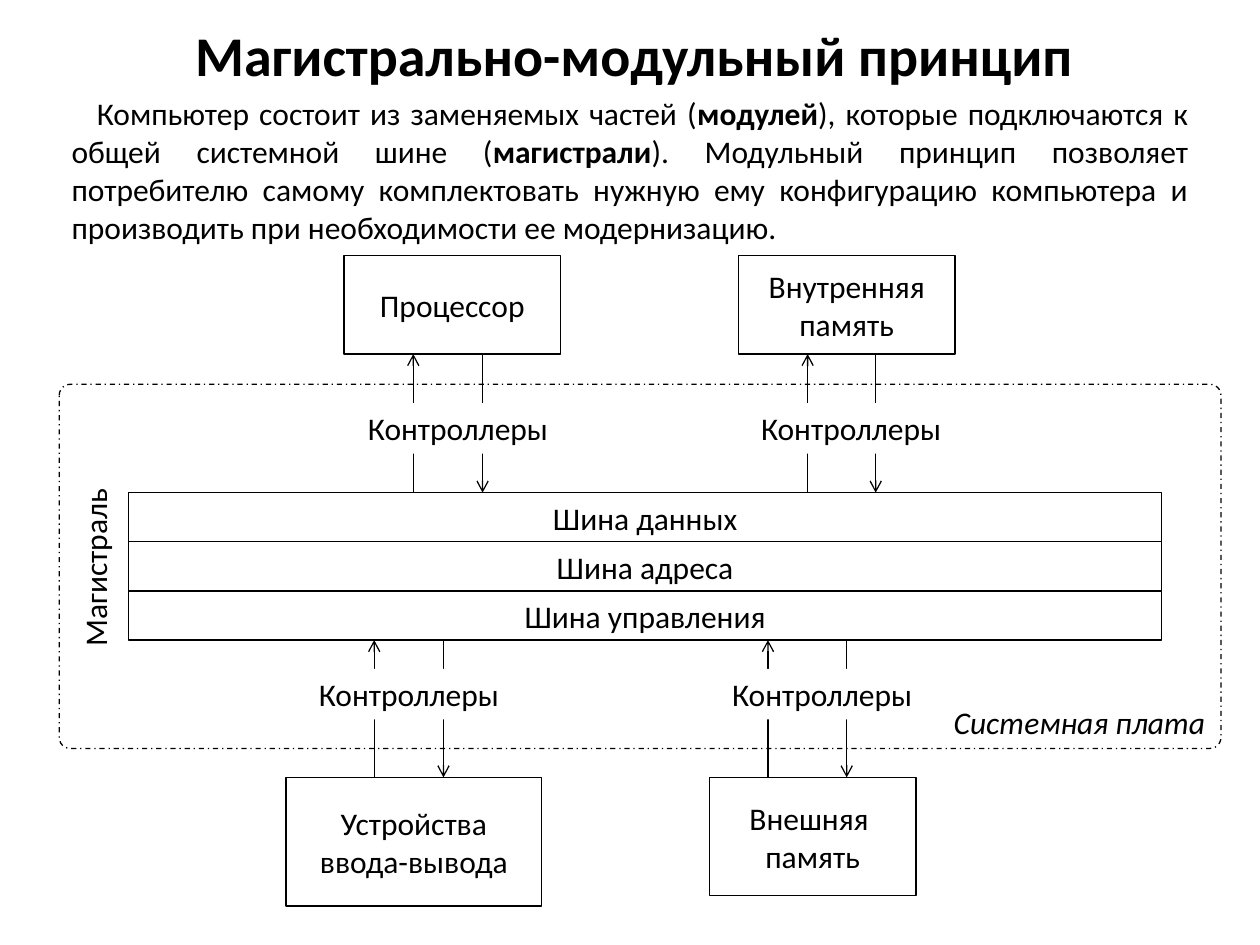
from dataclasses import dataclass

from lxml import etree
from pptx import Presentation
from pptx.dml.color import RGBColor
from pptx.enum import dml, shapes, text
from pptx.oxml import ns
from pptx.util import Inches, Length, Pt

BLACK = RGBColor(0, 0, 0)
WHITE = RGBColor(255, 255, 255)
FONT = "Calibri"
COLS, ROWS = 100, 75
WIDE, HIGH = Inches(10), Inches(7.5)

# Rows that the scheme hangs on
TOP_END, BUS_TOP, BUS_STEP, LOW_TOP = 28.1, 39.1, 3.9, 61.7
BUSES = ("Шина данных", "Шина адреса", "Шина управления")
BUS_END = BUS_TOP + BUS_STEP * len(BUSES)


@dataclass(frozen=True)
class Box:
    """A rectangle in columns and rows of the slide grid."""
    col: float
    row: float
    cols: float
    rows: float

    def place(self) -> tuple[Length, ...]:
        return (across(self.col), down(self.row),
                across(self.cols), down(self.rows))


@dataclass(frozen=True)
class Module:
    """A computer part with the columns of its two arrows and its controller."""
    name: str
    box: Box
    rise: float
    fall: float
    ctrl: float


TOP = (
    Module("Процессор", Box(27.3, 20.3, 17.2, 7.8), 32.8, 38.3, 26.6),
    Module("Внутренняя память", Box(58.6, 20.3, 17.2, 7.8), 64.1, 69.5, 57.8),
)
LOW = (
    Module("Устройства ввода-вывода", Box(22.7, LOW_TOP, 20.3, 10.2),
           29.7, 35.2, 22.7),
    Module("Внешняя \nпамять", Box(56.3, LOW_TOP, 16.4, 9.4),
           60.95, 67.2, 55.5),
)
INTRO = (
    ("Компьютер состоит из заменяемых частей (", False),
    ("модулей", True),
    ("), которые подключаются к общей системной шине (", False),
    ("магистрали", True),
    ("). Модульный принцип позволяет потребителю самому комплектовать нужную "
     "ему конфигурацию компьютера и производить при необходимости ее "
     "модернизацию.", False),
)


def across(cols: float) -> Length:
    return Length(round(WIDE * cols / COLS))


def down(rows: float) -> Length:
    return Length(round(HIGH * rows / ROWS))


def style(frame, size: int = 18, align=text.PP_ALIGN.CENTER,
          anchor=text.MSO_ANCHOR.TOP) -> None:
    frame.word_wrap = True
    frame.vertical_anchor = anchor
    for para in frame.paragraphs:
        para.alignment = align
        for run in para.runs:
            run.font.name = FONT
            run.font.size = Pt(size)
            run.font.color.rgb = BLACK


def block(slide, box: Box, words: str = "", fill: bool = False,
          line: bool = True, anchor=text.MSO_ANCHOR.TOP,
          kind=shapes.MSO_SHAPE.RECTANGLE):
    shape = slide.shapes.add_shape(kind, *box.place())
    shape.shadow.inherit = False
    if fill:
        shape.fill.solid()
        shape.fill.fore_color.rgb = WHITE
    else:
        shape.fill.background()
    if line:
        shape.line.color.rgb = BLACK
        shape.line.width = Pt(0.75)
    else:
        shape.line.fill.background()
    if words:
        shape.text_frame.text = words
        style(shape.text_frame, anchor=anchor)
    return shape


def label(slide, box: Box, words: str):
    shape = slide.shapes.add_textbox(*box.place())
    shape.text_frame.text = words
    style(shape.text_frame, align=text.PP_ALIGN.LEFT)
    return shape


def arrow(slide, col: float, start: float, end: float) -> None:
    line = slide.shapes.add_connector(
        shapes.MSO_CONNECTOR.STRAIGHT,
        across(col), down(start), across(col), down(end))
    line.line.color.rgb = BLACK
    line.line.width = Pt(0.75)
    etree.SubElement(line.line._get_or_add_ln(), ns.qn("a:tailEnd"),
                     type="arrow")
    etree.SubElement(line._element.spPr, ns.qn("a:effectLst"))


def module(slide, part: Module, upper: float, lower: float,
           ctrl: float) -> None:
    """Draw a part, its arrows between two rows, and its controller."""
    block(slide, part.box, part.name, fill=True,
          anchor=text.MSO_ANCHOR.MIDDLE)
    arrow(slide, part.rise, lower, upper)
    arrow(slide, part.fall, upper, lower)
    block(slide, Box(part.ctrl, ctrl, 19.5, 4), "Контроллеры",
          fill=True, line=False)


def head(slide) -> None:
    title = slide.shapes.title
    title.left, title.top, title.width, title.height = Box(
        3.1, 0, 94.5, 8.6).place()
    title.text_frame.text = "Магистрально-модульный принцип"
    style(title.text_frame, 32, anchor=text.MSO_ANCHOR.MIDDLE)
    title.text_frame.paragraphs[0].runs[0].font.bold = True


def intro(slide) -> None:
    frame = label(slide, Box(4.7, 7, 90.6, 13.1), "").text_frame
    para = frame.paragraphs[0]
    for words, bold in INTRO:
        run = para.add_run()
        run.text = words
        run.font.bold = bold
    style(frame, align=text.PP_ALIGN.JUSTIFY)
    para._p.get_or_add_pPr().set("indent", str(across(2)))


def board(slide) -> None:
    frame = block(slide, Box(4.7, 30.5, 92.2, 28.9),
                  kind=shapes.MSO_SHAPE.ROUNDED_RECTANGLE)
    frame.adjustments[0] = 0.03
    frame.line.dash_style = dml.MSO_LINE.DASH_DOT
    name = label(slide, Box(74.7, 55.3, 22.2, 4), "Системная плата")
    name.text_frame.word_wrap = False
    name.text_frame.paragraphs[0].runs[0].font.italic = True


def bus(slide) -> None:
    for i, name in enumerate(BUSES):
        block(slide, Box(10.2, BUS_TOP + i * BUS_STEP, 82, BUS_STEP), name)
    label(slide, Box(0.1, 42.9, 14.8, 4), "Магистраль").rotation = 270


def main() -> None:
    deck = Presentation()
    deck.slide_width, deck.slide_height = WIDE, HIGH
    slide = deck.slides.add_slide(deck.slide_layouts.get_by_name("Title Only"))
    head(slide)
    intro(slide)
    board(slide)
    bus(slide)
    for part in TOP:
        module(slide, part, TOP_END, BUS_TOP, 32)
    for part in LOW:
        module(slide, part, BUS_END, LOW_TOP, 53.1)
    deck.save("out.pptx")


if __name__ == "__main__":
    main()
